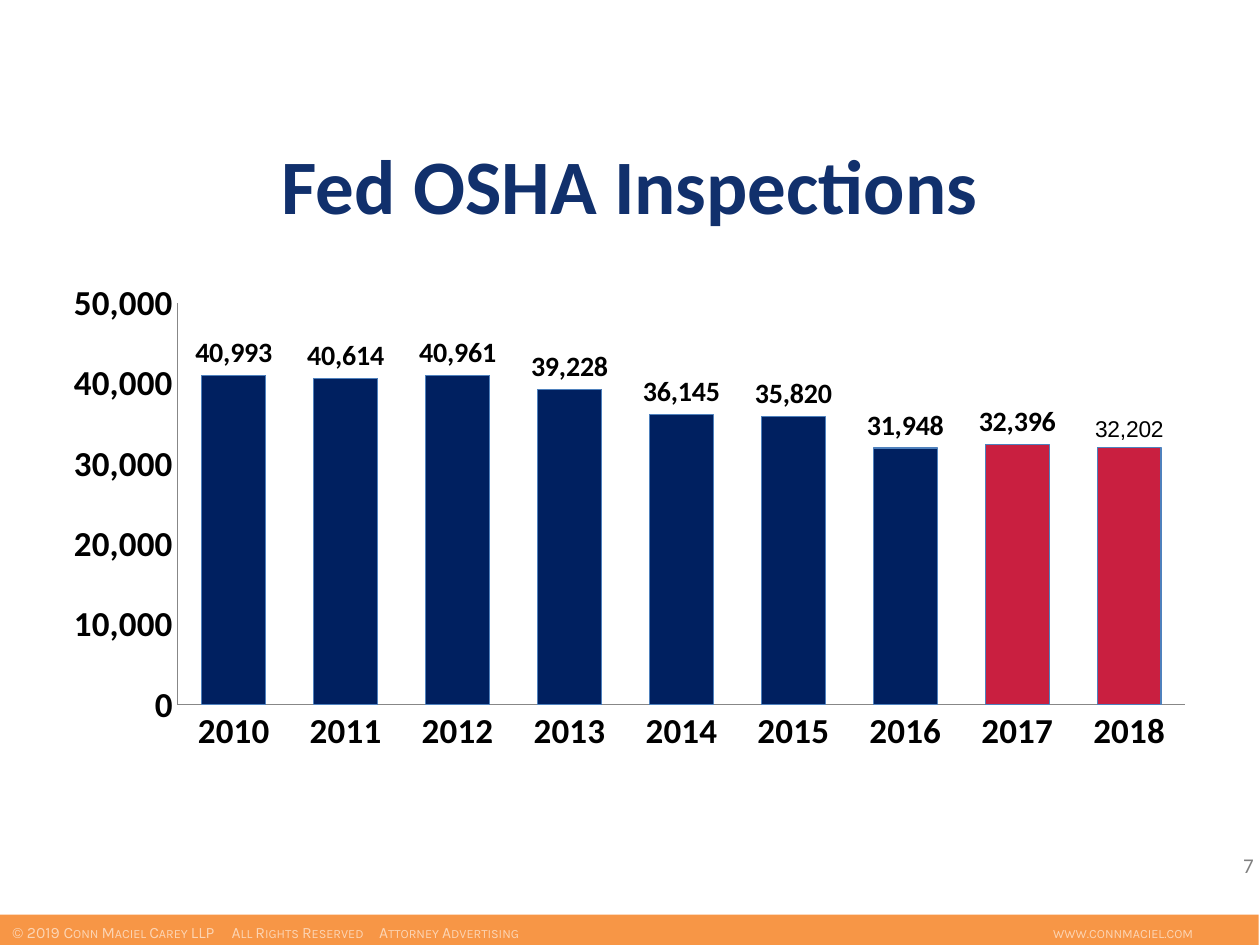
from lxml import etree
from pptx import Presentation
from pptx import util as u
from pptx.chart.data import CategoryChartData
from pptx.dml.color import RGBColor
from pptx.enum import chart as c, shapes, text
from pptx.oxml import parse_xml
from pptx.oxml.ns import nsdecls, qn

NAVY = RGBColor(0x00, 0x20, 0x60)
TITLE_BLUE = RGBColor(0x11, 0x30, 0x6C)
RED = RGBColor(0xC9, 0x1F, 0x40)
BAR_LINE = RGBColor(0x4F, 0x81, 0xBD)
AXIS_GRAY = RGBColor(0x87, 0x87, 0x87)
NUMBER_GRAY = RGBColor(0x80, 0x80, 0x80)
ORANGE = RGBColor(0xF7, 0x96, 0x46)
PEACH = RGBColor(0xFC, 0xD5, 0xB5)
BLACK = RGBColor(0, 0, 0)


def set_font(font, name, size, color, bold=False):
    font.name = name
    font.size = u.Pt(size)
    font.bold = bold
    font.color.rgb = color


def add_text(slide, words, box, alignment):
    shape = slide.shapes.add_textbox(*map(u.Inches, box))
    frame = shape.text_frame
    frame.word_wrap = True
    frame.vertical_anchor = text.MSO_ANCHOR.MIDDLE
    paragraph = frame.paragraphs[0]
    paragraph.text = words
    paragraph.alignment = alignment
    return paragraph


presentation = Presentation()
presentation.slide_width = u.Inches(10)
presentation.slide_height = u.Inches(7.5)
slide = presentation.slides.add_slide(presentation.slide_layouts[6])

# Slide number and title
number = add_text(slide, "7", (7.72, 6.67, 2.33, 0.4), text.PP_ALIGN.RIGHT)
set_font(number.font, "Calibri", 12, NUMBER_GRAY)
title = add_text(slide, "Fed OSHA Inspections", (0.75, 0.92, 8.5, 1.08), text.PP_ALIGN.CENTER)
set_font(title.font, "Calibri", 44, TITLE_BLUE, True)

# Inspections per year
data = CategoryChartData(number_format="#,##0")
data.categories = [str(year) for year in range(2010, 2019)]
data.add_series("Series 1", (40993, 40614, 40961, 39228, 36145, 35820, 31948, 32396, 32020))
chart = slide.shapes.add_chart(
    c.XL_CHART_TYPE.COLUMN_CLUSTERED,
    u.Inches(0.4), u.Inches(2.17), u.Inches(9.19), u.Inches(3.89), data).chart
chart.has_legend = False
chart.has_title = False
set_font(chart.font, "Arial", 10, BLACK)

# Axes
for axis in (chart.category_axis, chart.value_axis):
    axis.major_tick_mark = axis.minor_tick_mark = c.XL_TICK_MARK.NONE
    axis.has_major_gridlines = False
    axis.format.line.color.rgb = AXIS_GRAY
    axis.format.line.width = u.Pt(0.75)
    set_font(axis.tick_labels.font, "Calibri", 20, BLACK, True)
chart.value_axis.minimum_scale = 0
chart.value_axis.maximum_scale = 50000
chart.value_axis.major_unit = 10000
chart.value_axis.tick_labels.number_format = "#,##0"
chart.value_axis.tick_labels.number_format_is_linked = False

# Bars: the last two years stand out in red
plot = chart.plots[0]
plot.gap_width = 75
plot.vary_by_categories = False
series = plot.series[0]
series.format.fill.solid()
series.format.fill.fore_color.rgb = NAVY
series.format.line.color.rgb = BAR_LINE
series.format.line.width = u.Pt(0.75)
for index in (7, 8):
    point = series.points[index]
    point.format.fill.solid()
    point.format.fill.fore_color.rgb = RED
    point.format.line.color.rgb = BAR_LINE
    point.format.line.width = u.Pt(0.75)

# Value labels, the last one with its own wording
labels = series.data_labels
labels.show_value = True
labels.number_format = "#,##0"
labels.number_format_is_linked = False
labels.position = c.XL_LABEL_POSITION.OUTSIDE_END
set_font(labels.font, "Calibri", 16, BLACK, True)
last_label = series.points[8].data_label
last_label.position = c.XL_LABEL_POSITION.OUTSIDE_END
last_run = last_label.text_frame.paragraphs[0].add_run()
last_run.text = "32,202"
set_font(last_run.font, "Arial", 13, BLACK)

# Fixed inner plot area
plot_area = chart.plots[0]._element.getparent()
for old_layout in plot_area.findall(qn("c:layout")):
    plot_area.remove(old_layout)
plot_area.insert(0, parse_xml(
    f'<c:layout {nsdecls("c")}><c:manualLayout><c:layoutTarget val="inner"/>'
    '<c:xMode val="edge"/><c:yMode val="edge"/><c:x val="0.11"/><c:y val="0.06"/>'
    '<c:w val="0.87"/><c:h val="0.82"/></c:manualLayout></c:layout>'))

# Footer band
footer = slide.shapes.add_shape(
    shapes.MSO_SHAPE.RECTANGLE, u.Inches(0), u.Inches(7.26), u.Inches(9.99), u.Inches(0.26))
footer.shadow.inherit = False
footer.fill.solid()
footer.fill.fore_color.rgb = ORANGE
footer.line.fill.background()
frame = footer.text_frame
frame.word_wrap = True
frame.vertical_anchor = text.MSO_ANCHOR.TOP
paragraph = frame.paragraphs[0]
paragraph.alignment = text.PP_ALIGN.LEFT
paragraph.line_spacing = u.Pt(12)
tabs = etree.SubElement(paragraph._p.get_or_add_pPr(), qn("a:tabLst"))
for position in (1.74, 2.91, 8.26):
    etree.SubElement(tabs, qn("a:tab"), pos=str(u.Inches(position)), algn="l")
set_font(paragraph.font, "Karla", 9, PEACH)
paragraph.add_run().text = "© 2019 "
small_caps = paragraph.add_run()
small_caps.text = "Conn Maciel Carey LLP\tAll Rights Reserved\tAttorney Advertising\twww.connmaciel.com"
small_caps.font._element.set("cap", "small")

presentation.save("out.pptx")
